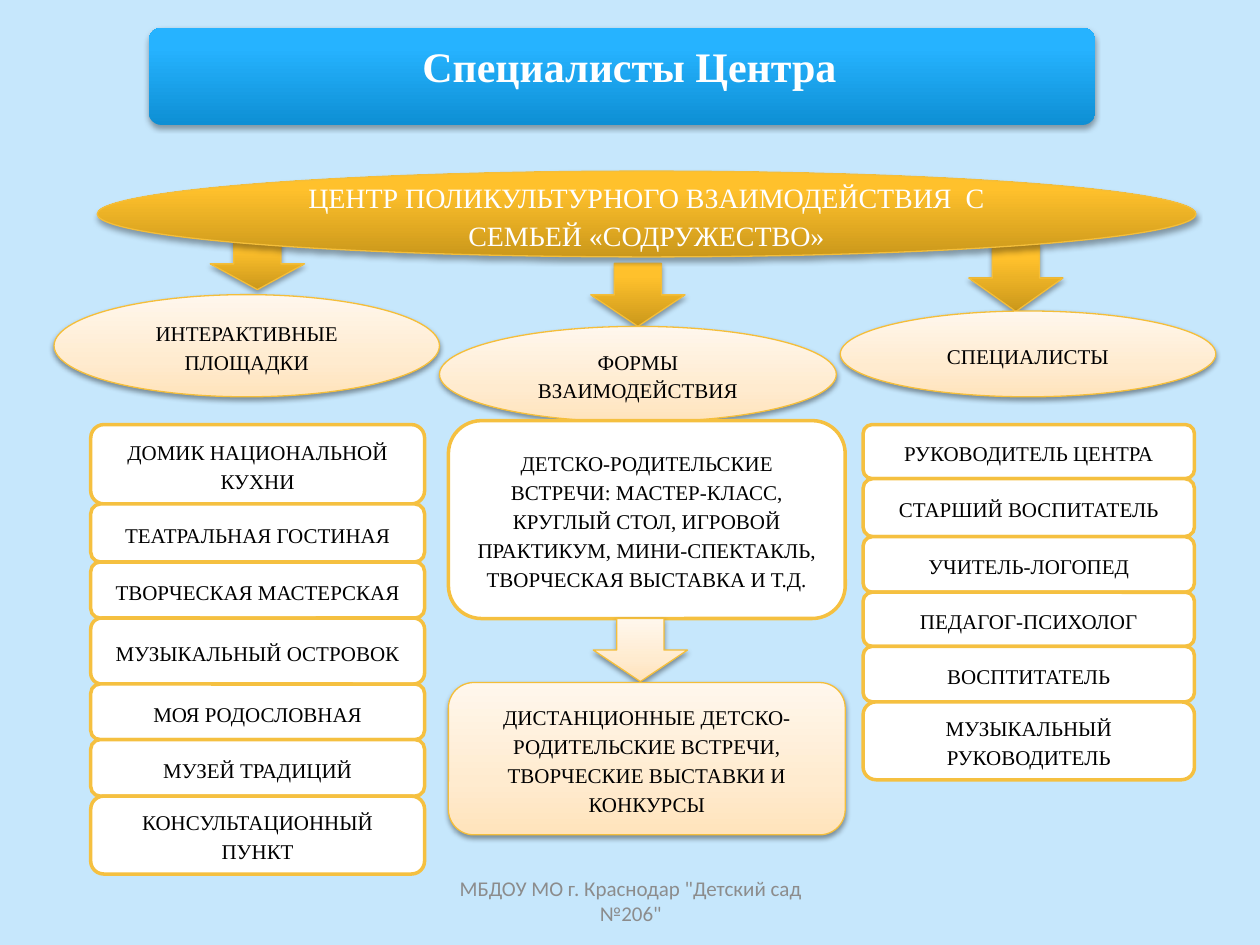
from dataclasses import dataclass

from lxml import etree
from pptx import Presentation
from pptx import util as u
from pptx.dml.color import RGBColor
from pptx.enum import shapes, text
from pptx.oxml import ns

SHAPE = shapes.MSO_SHAPE


@dataclass(frozen=True)
class Theme:
    bg: str = "C6E7FC"
    white: str = "FFFFFF"
    black: str = "000000"
    grey: str = "8C8C8C"
    edge: str = "F4BE3A"
    row_edge: str = "F5C040"
    blue: tuple = ((0, "0E8FD4"), (80, "26B3FF"), (100, "27B4FF"))
    gold: tuple = ((0, "CB981B"), (80, "FFC12C"), (100, "FFC22E"))
    cream: tuple = ((0, "FFE3BB"), (35, "FFEBCF"), (100, "FFF7ED"))
    serif: str = "Times New Roman"
    sans: str = "Calibri"
    title: int = 24
    heading: int = 16
    body: int = 12


def write(tf, value, font, size, color, bold=False, spacing=1.0, after=0, inset=None):
    tf.word_wrap = True
    tf.vertical_anchor = text.MSO_ANCHOR.MIDDLE
    if inset is not None:
        tf.margin_left = tf.margin_right = tf.margin_top = tf.margin_bottom = u.Cm(inset)
    p = tf.paragraphs[0]
    p.alignment = text.PP_ALIGN.CENTER
    p.line_spacing, p.space_after = spacing, u.Pt(after)
    r = p.add_run()
    r.text = value
    r.font.name, r.font.size, r.font.bold = font, u.Pt(size), bold
    r.font.color.rgb = RGBColor.from_string(color)


def node(parent, tag, **attrs):
    el = etree.SubElement(parent, ns.qn(tag))
    for key, value in attrs.items():
        el.set(key, str(value))
    return el


class Deck:
    """Draws styled elements on the current slide."""

    def __init__(self, prs, theme):
        self.t = theme
        self.s = prs.slides.add_slide(prs.slide_layouts[6])
        fill = self.s.background.fill
        fill.solid()
        fill.fore_color.rgb = RGBColor.from_string(theme.bg)

    def label(self, box, value, **fmt):
        sp = self.s.shapes.add_textbox(*map(u.Cm, box))
        write(sp.text_frame, value, **fmt)

    def shape(self, kind, box, edge=None, width=0.75):
        sp = self.s.shapes.add_shape(kind, *map(u.Cm, box))
        sp.shadow.inherit = False
        if edge:
            sp.line.color.rgb = RGBColor.from_string(edge)
            sp.line.width = u.Pt(width)
        else:
            sp.line.fill.background()
        return sp

    def caption(self, sp, value, size=None, color=None):
        write(sp.text_frame, value, self.t.serif, size or self.t.body,
              color or self.t.black, spacing=1.15, after=10)

    def glossy(self, kind, box, stops, edge=None, alpha=38, dist=1.6):
        sp = self.shape(kind, box, edge)
        sp.fill.gradient()
        sp.fill.gradient_angle = 90
        spPr = sp._element.spPr
        gs_lst = spPr.find(".//" + ns.qn("a:gsLst"))
        for gs in list(gs_lst):
            gs_lst.remove(gs)
        for pos, color in stops:
            node(node(gs_lst, "a:gs", pos=pos * 1000), "a:srgbClr", val=color)
        shadow = node(spPr.find(ns.qn("a:effectLst")), "a:outerShdw", blurRad=u.Pt(3.1),
                      dist=u.Pt(dist), dir=5400000, rotWithShape=0)
        clr = node(shadow, "a:srgbClr", val=self.t.black)
        node(clr, "a:alpha", val=alpha * 1000)
        return sp

    def gold(self, kind, box):
        return self.glossy(kind, box, self.t.gold, self.t.edge, 35, 1.8)

    def cream(self, kind, box, value=None):
        sp = self.glossy(kind, box, self.t.cream, self.t.edge)
        if value:
            self.caption(sp, value)

    def card(self, box, value):
        sp = self.shape(SHAPE.ROUNDED_RECTANGLE, box, self.t.row_edge, 2)
        sp.fill.solid()
        sp.fill.fore_color.rgb = RGBColor.from_string(self.t.white)
        self.caption(sp, value)

    def stack(self, left, top, width, rows):
        for height, value in rows:
            self.card((left, top, width, height), value)
            top += height

    def banner(self, box, text_box, value):
        sp = self.glossy(SHAPE.ROUNDED_RECTANGLE, box, self.t.blue, alpha=35, dist=1.8)
        sp.adjustments[0] = 0.13
        self.label(text_box, value, font=self.t.serif, size=self.t.title, color=self.t.white,
                   bold=True, spacing=0.9, after=8, inset=0.38)


PLATFORMS = [
    (1.6, "ДОМИК НАЦИОНАЛЬНОЙ КУХНИ"),
    (1.17, "ТЕАТРАЛЬНАЯ ГОСТИНАЯ"),
    (1.13, "ТВОРЧЕСКАЯ МАСТЕРСКАЯ"),
    (1.33, "МУЗЫКАЛЬНЫЙ ОСТРОВОК"),
    (1.12, "МОЯ РОДОСЛОВНАЯ"),
    (1.14, "МУЗЕЙ ТРАДИЦИЙ"),
    (1.57, "КОНСУЛЬТАЦИОННЫЙ ПУНКТ"),
]
STAFF = [
    (1.09, "РУКОВОДИТЕЛЬ ЦЕНТРА"),
    (1.17, "СТАРШИЙ ВОСПИТАТЕЛЬ"),
    (1.12, "УЧИТЕЛЬ-ЛОГОПЕД"),
    (1.09, "ПЕДАГОГ-ПСИХОЛОГ"),
    (1.12, "ВОСПТИТАТЕЛЬ"),
    (1.57, "МУЗЫКАЛЬНЫЙ РУКОВОДИТЕЛЬ"),
]
BRANCHES = [
    ((1.09, 5.94, 7.77, 2.06), "ИНТЕРАКТИВНЫЕ ПЛОЩАДКИ"),
    ((16.94, 6.27, 7.57, 1.73), "СПЕЦИАЛИСТЫ"),
    ((8.86, 6.58, 8, 1.93), "ФОРМЫ ВЗАИМОДЕЙСТВИЯ"),
]
ARROWS = [(4.24, 4.8, 1.9, 1.04), (19.53, 4.93, 1.9, 1.35), (11.91, 5.31, 1.9, 1.27)]


def main():
    prs = Presentation()
    prs.slide_width, prs.slide_height = u.Cm(25.4), u.Cm(19.05)
    t = Theme()
    d = Deck(prs, t)
    d.label((8.69, 17.65, 8.05, 1.02), 'МБДОУ МО г. Краснодар "Детский сад №206"',
            font=t.sans, size=t.body, color=t.grey)
    d.banner((3, 0.56, 19.08, 1.96), (3.28, 0.66, 18.82, 1.45), "Специалисты Центра")
    for box in ARROWS:
        d.gold(SHAPE.DOWN_ARROW, box)
    center = d.gold(SHAPE.OVAL, (1.96, 3.45, 22.15, 1.73))
    d.caption(center, "ЦЕНТР ПОЛИКУЛЬТУРНОГО ВЗАИМОДЕЙСТВИЯ  С СЕМЬЕЙ «СОДРУЖЕСТВО»",
              t.heading, t.white)
    for box, value in BRANCHES:
        d.cream(SHAPE.OVAL, box, value)
    d.stack(1.83, 8.56, 6.73, PLATFORMS)
    d.card((9.04, 8.48, 8, 3.99),
           "ДЕТСКО-РОДИТЕЛЬСКИЕ ВСТРЕЧИ: МАСТЕР-КЛАСС, КРУГЛЫЙ СТОЛ, ИГРОВОЙ ПРАКТИКУМ, "
           "МИНИ-СПЕКТАКЛЬ, ТВОРЧЕСКАЯ ВЫСТАВКА И Т.Д.")
    d.stack(17.4, 8.56, 6.68, STAFF)
    d.cream(SHAPE.DOWN_ARROW, (11.96, 12.47, 1.9, 1.27))
    d.cream(SHAPE.ROUNDED_RECTANGLE, (9.04, 13.76, 8, 3.07),
            "ДИСТАНЦИОННЫЕ ДЕТСКО-РОДИТЕЛЬСКИЕ ВСТРЕЧИ, ТВОРЧЕСКИЕ ВЫСТАВКИ И КОНКУРСЫ")
    prs.save("out.pptx")


if __name__ == "__main__":
    main()
